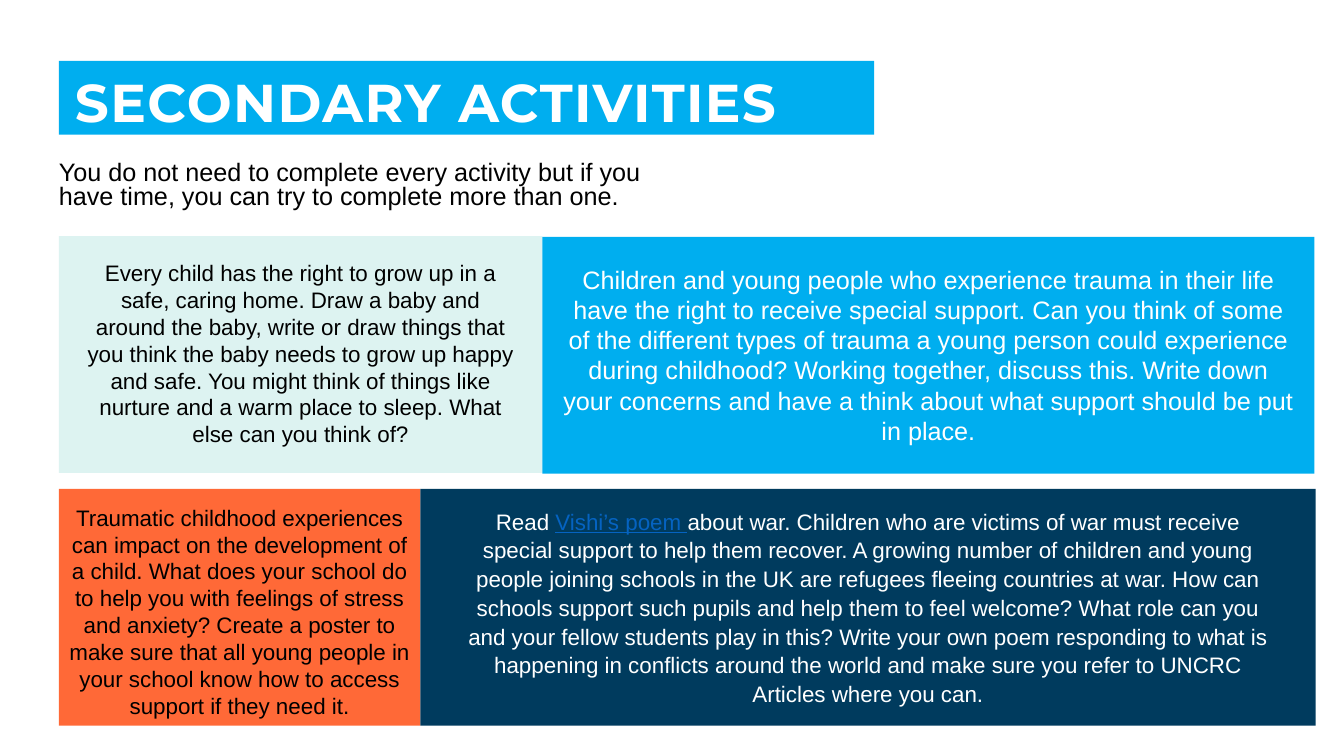
from dataclasses import dataclass

from lxml.etree import SubElement
from pptx import Presentation
from pptx.dml.color import RGBColor
from pptx.enum.shapes import MSO_SHAPE
from pptx.enum.text import MSO_ANCHOR, MSO_AUTO_SIZE, PP_ALIGN
from pptx.oxml.ns import qn
from pptx.util import Pt

WHITE = RGBColor(0xFF, 0xFF, 0xFF)
BLACK = RGBColor(0x00, 0x00, 0x00)
CYAN = RGBColor(0x00, 0xAE, 0xEF)
MINT = RGBColor(0xDD, 0xF3, 0xF1)
ORANGE = RGBColor(0xFF, 0x69, 0x37)
NAVY = RGBColor(0x00, 0x3B, 0x5E)
LINK_BLUE = RGBColor(0x05, 0x63, 0xC1)

LEFT = 42
CARD_HEIGHT = 169.2
UPPER_ROW, LOWER_ROW = 168.6, 349.2
MINT_WIDTH, ORANGE_WIDTH = 345.4, 258.3


@dataclass
class Activity:
    """A card's box, its colours and how its text sits inside it."""
    box: tuple
    fill: RGBColor
    color: RGBColor
    side_inset: float
    top_inset: float
    text_height: float
    pieces: tuple
    size: int = 16
    linked: int = -1
    line_spacing: float = 1.0
    space_after: float = 0


ACTIVITIES = [
    Activity((LEFT, UPPER_ROW, MINT_WIDTH, CARD_HEIGHT), MINT, BLACK, 13, 13, 143.3, (
        "Every child has the right to grow up in a safe, caring home. Draw a baby and "
        "around the baby, write or draw things that you think the baby needs to grow up "
        "happy and safe. You might think of things like nurture and a warm place to sleep. "
        "What else can you think of?",)),
    Activity((LEFT, LOWER_ROW, ORANGE_WIDTH, CARD_HEIGHT), ORANGE, BLACK, 0, 7.2, 162.7, (
        "Traumatic childhood experiences can impact on the development of a child. What "
        "does your school do to help you with feelings of stress and anxiety? Create a "
        "poster to make sure that all young people in your school know how to access "
        "support if they need it.",)),
    Activity((LEFT + MINT_WIDTH, UPPER_ROW + 0.6, 551.5, CARD_HEIGHT), CYAN, WHITE,
             7.9, 15.8, 157.7, (
        "Children and young people who experience trauma in their life have the right to "
        "receive special support. Can you think of some of the different types of trauma a "
        "young person could experience during childhood? Working together, discuss this. "
        "Write down your concerns and have a think about what support should be put in "
        "place.",), size=18),
    Activity((LEFT + ORANGE_WIDTH, LOWER_ROW, 639.4, CARD_HEIGHT), NAVY, WHITE,
             23.6, 8.6, 151.2, (
        "Read ",
        "Vishi’s poem ",
        "about war. Children who are victims of war must receive special support to help "
        "them recover. A growing number of children and young people joining schools in "
        "the UK are refugees fleeing countries at war. How can schools support such pupils "
        "and help them to feel welcome? What role can you and your fellow students play in "
        "this? Write your own poem responding to what is happening in conflicts around the "
        "world and make sure you refer to UNCRC Articles where you can."),
        linked=1, line_spacing=1.07, space_after=8),
]


def place(shape, box):
    shape.left, shape.top, shape.width, shape.height = map(Pt, box)


def set_frame(frame, insets, anchor):
    """Fix the frame's size, wrapping, anchor and left, top, right, bottom insets."""
    frame.word_wrap = True
    frame.auto_size = MSO_AUTO_SIZE.NONE
    frame.vertical_anchor = anchor
    (frame.margin_left, frame.margin_top,
     frame.margin_right, frame.margin_bottom) = map(Pt, insets)


def style_paragraph(paragraph, font_name, size, color, align, line_spacing, bold=False):
    paragraph.alignment = align
    paragraph.line_spacing = line_spacing
    paragraph.space_before = Pt(0)
    font = paragraph.font
    font.name, font.size, font.bold = font_name, Pt(size), bold
    font.color.rgb = color


def add_heading(slide, box):
    heading = slide.shapes.title
    place(heading, box)
    heading.fill.solid()
    heading.fill.fore_color.rgb = CYAN
    set_frame(heading.text_frame, (11.5, 11.5, 8.6, 0), MSO_ANCHOR.MIDDLE)
    heading.text_frame.text = "SECONDARY ACTIVITIES"
    paragraph = heading.text_frame.paragraphs[0]
    style_paragraph(paragraph, "Montserrat", 38, WHITE, PP_ALIGN.LEFT, 0.9, bold=True)
    paragraph.runs[0].font._element.set("spc", "100")


def add_introduction(slide, box):
    introduction = slide.placeholders[1]
    place(introduction, box)
    set_frame(introduction.text_frame, (0, 3.6, 7.2, 3.6), MSO_ANCHOR.TOP)
    introduction.text_frame.text = (
        "You do not need to complete every activity but if you have time, "
        "you can try to complete more than one.")
    paragraph = introduction.text_frame.paragraphs[0]
    properties = paragraph._p.get_or_add_pPr()
    properties.set("marL", "0")
    properties.set("indent", "0")
    SubElement(properties, qn("a:buNone"))
    style_paragraph(paragraph, "Arial", 18, BLACK, PP_ALIGN.LEFT, 0.8)


def add_activity(slide, activity):
    left, top, width, height = activity.box
    card = slide.shapes.add_shape(
        MSO_SHAPE.RECTANGLE, Pt(left), Pt(top), Pt(width), Pt(height))
    card.shadow.inherit = False
    card.fill.solid()
    card.fill.fore_color.rgb = activity.fill
    card.line.fill.background()

    task = slide.shapes.add_textbox(
        Pt(left + activity.side_inset), Pt(top + activity.top_inset),
        Pt(width - 2 * activity.side_inset), Pt(activity.text_height))
    set_frame(task.text_frame, (7.2, 3.6, 7.2, 3.6), MSO_ANCHOR.TOP)
    paragraph = task.text_frame.paragraphs[0]
    style_paragraph(paragraph, "Arial", activity.size, activity.color,
                    PP_ALIGN.CENTER, activity.line_spacing)
    paragraph.space_after = Pt(activity.space_after)
    for index, piece in enumerate(activity.pieces):
        run = paragraph.add_run()
        run.text = piece
        if index == activity.linked:
            run.font.color.rgb = LINK_BLUE
            run.font.underline = True


def main():
    presentation = Presentation()
    presentation.slide_width, presentation.slide_height = Pt(960), Pt(540)
    slide = presentation.slides.add_slide(presentation.slide_layouts[1])
    add_heading(slide, (LEFT, 43.4, 582.4, 52.8))
    add_introduction(slide, (LEFT, 112.3, 447, 44.6))
    for activity in ACTIVITIES:
        add_activity(slide, activity)
    presentation.save("out.pptx")


if __name__ == "__main__":
    main()
